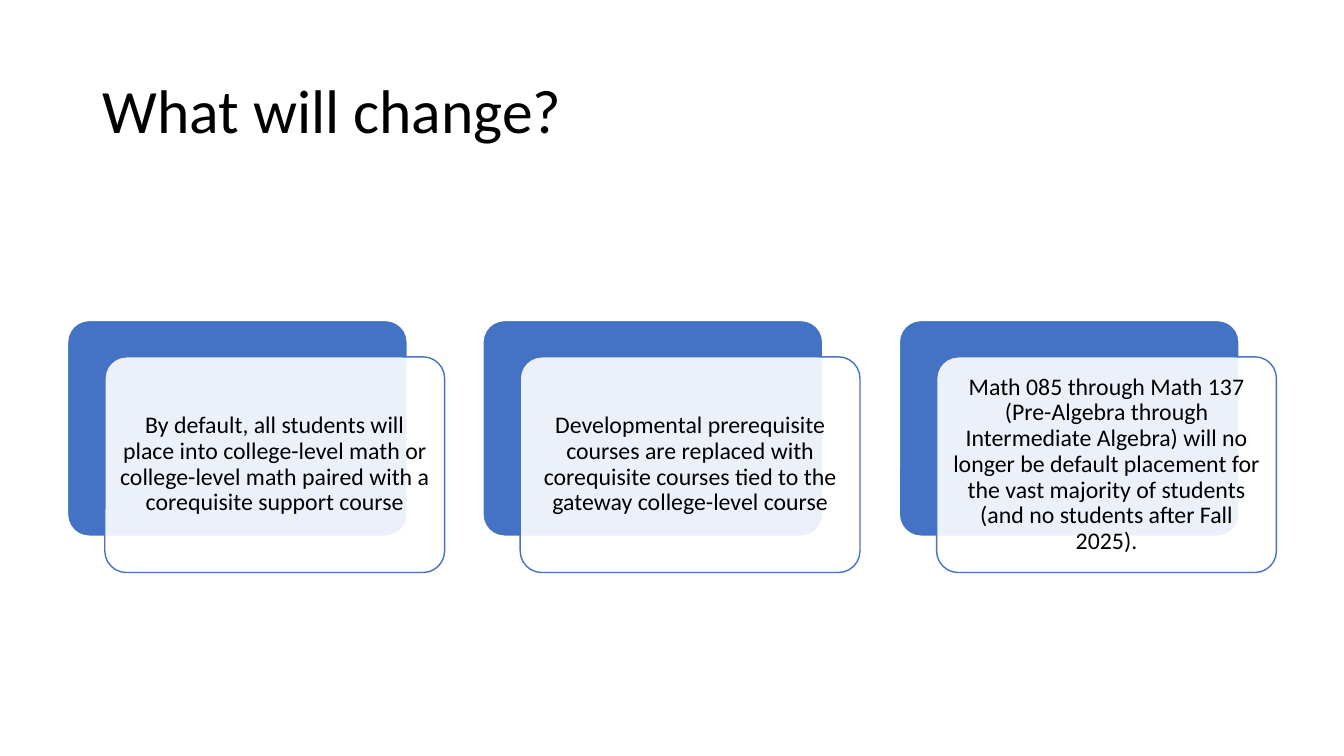
from dataclasses import dataclass

from lxml.etree import SubElement
from pptx import Presentation
from pptx.dml.color import RGBColor
from pptx.enum.shapes import MSO_SHAPE
from pptx.enum.text import MSO_ANCHOR, PP_ALIGN
from pptx.oxml.ns import qn
from pptx.shapes.autoshape import Shape
from pptx.shapes.shapetree import GroupShapes, SlideShapes
from pptx.util import Emu, Pt

EMU_PER_PX = 9144


@dataclass(frozen=True)
class Theme:
    font: str = "Calibri"
    ink: RGBColor = RGBColor(0, 0, 0)
    paper: RGBColor = RGBColor(255, 255, 255)
    accent: RGBColor = RGBColor(0x44, 0x72, 0xC4)
    title_size: int = 44
    card_size: int = 17
    line_width: int = 1
    line_spacing: float = 0.9
    corner: float = 0.1
    front_opacity: int = 90


@dataclass(frozen=True)
class Box:
    left: int
    top: int
    width: int
    height: int

    def shifted(self, across: int, down: int) -> "Box":
        return Box(self.left + across, self.top + down, self.width, self.height)

    def inset(self, margin: int) -> "Box":
        return Box(self.left + margin, self.top + margin,
                   self.width - 2 * margin, self.height - 2 * margin)

    def emu(self) -> tuple[Emu, Emu, Emu, Emu]:
        return px(self.left), px(self.top), px(self.width), px(self.height)


@dataclass(frozen=True)
class Card:
    back: Box
    change: str


def px(length: int) -> Emu:
    return Emu(length * EMU_PER_PX)


THEME = Theme()
TITLE_BOX = Box(92, 40, 1150, 145)
FIRST_BACK = Box(67, 318, 337, 214)
TWO_CARD_PITCH = 825
FRONT_ACROSS, FRONT_DOWN = 37, 36
TEXT_INSET = 6
TEXT_MARGIN = 7
CHANGES = (
    "By default, all students will place into college-level math or "
    "college-level math paired with a corequisite support course",
    "Developmental prerequisite courses are replaced with corequisite "
    "courses tied to the gateway college-level course",
    "Math 085 through Math 137 (Pre-Algebra through Intermediate Algebra) "
    "will no longer be default placement for the vast majority of students "
    "(and no students after Fall 2025).",
)
CARDS = [
    Card(FIRST_BACK.shifted(index * TWO_CARD_PITCH // 2, 0), change)
    for index, change in enumerate(CHANGES)
]


def add_text(shapes: SlideShapes | GroupShapes, box: Box, text: str, size: int,
             align: PP_ALIGN) -> Shape:
    label = shapes.add_textbox(*box.emu())
    frame = label.text_frame
    frame.word_wrap = True
    frame.vertical_anchor = MSO_ANCHOR.MIDDLE
    frame.text = text
    paragraph = frame.paragraphs[0]
    paragraph.alignment = align
    paragraph.line_spacing = THEME.line_spacing
    font = paragraph.runs[0].font
    font.name = THEME.font
    font.size = Pt(size)
    font.color.rgb = THEME.ink
    return label


def add_panel(shapes: GroupShapes, box: Box, fill: RGBColor, line: RGBColor) -> Shape:
    panel = shapes.add_shape(MSO_SHAPE.ROUNDED_RECTANGLE, *box.emu())
    panel.adjustments[0] = THEME.corner
    panel.shadow.inherit = False
    panel.fill.solid()
    panel.fill.fore_color.rgb = fill
    panel.line.color.rgb = line
    panel.line.width = Pt(THEME.line_width)
    return panel


def set_opacity(panel: Shape, percent: int) -> None:
    color = panel.fill._xPr.find(qn("a:solidFill")).find(qn("a:srgbClr"))
    SubElement(color, qn("a:alpha")).set("val", str(percent * 1000))


def add_card(shapes: GroupShapes, card: Card) -> None:
    add_panel(shapes, card.back, THEME.accent, THEME.paper)
    front_box = card.back.shifted(FRONT_ACROSS, FRONT_DOWN)
    front = add_panel(shapes, front_box, THEME.paper, THEME.accent)
    set_opacity(front, THEME.front_opacity)
    change = add_text(shapes, front_box.inset(TEXT_INSET), card.change,
                      THEME.card_size, PP_ALIGN.CENTER)
    frame = change.text_frame
    frame.margin_left = frame.margin_right = px(TEXT_MARGIN)
    frame.margin_top = frame.margin_bottom = px(TEXT_MARGIN)


def main() -> None:
    presentation = Presentation()
    presentation.slide_width = px(1333)
    presentation.slide_height = px(750)
    slide = presentation.slides.add_slide(presentation.slide_layouts[6])
    add_text(slide.shapes, TITLE_BOX, "What will change?", THEME.title_size, PP_ALIGN.LEFT)
    changes = slide.shapes.add_group_shape()
    for card in CARDS:
        add_card(changes.shapes, card)
    presentation.save("out.pptx")


if __name__ == "__main__":
    main()
